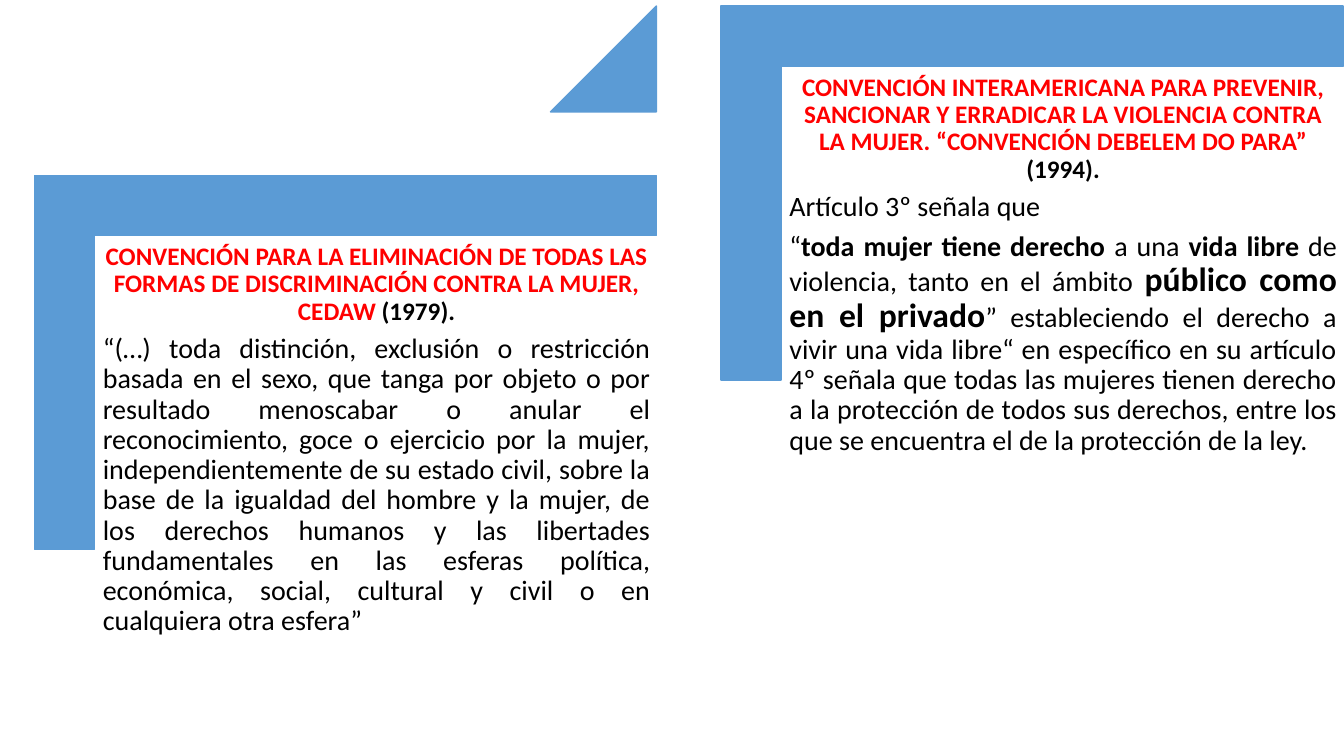
from pptx import Presentation
from pptx.dml.color import RGBColor as Rgb
from pptx.enum.shapes import MSO_SHAPE as Shape
from pptx.enum.text import MSO_ANCHOR as Anchor, PP_ALIGN as Align
from pptx.util import Inches, Pt

HUES = {"blue": "5B9BD5", "red": "FF0000", "black": "000000"}
WIDE, HIGH, BAND = 6.17, 3.71, 0.61

CEDAW = [
    [("CONVENCIÓN PARA LA ELIMINACIÓN DE TODAS LAS FORMAS DE DISCRIMINACIÓN "
      "CONTRA LA MUJER, CEDAW ", 18, True, "red"),
     ("(1979).", 18, True, "black")],
    [("“(…) toda distinción, exclusión o restricción basada en el sexo, que tanga "
      "por objeto o por resultado menoscabar o anular el reconocimiento, goce o "
      "ejercicio por la mujer, independientemente de su estado civil, sobre la base "
      "de la igualdad del hombre y la mujer, de los derechos humanos y las libertades "
      "fundamentales en las esferas política, económica, social, cultural y civil o "
      "en cualquiera otra esfera”", 20, False, "black")],
]
BELEM = [
    [("CONVENCIÓN INTERAMERICANA PARA PREVENIR, SANCIONAR Y ERRADICAR LA VIOLENCIA "
      "CONTRA LA MUJER. “CONVENCIÓN DEBELEM DO PARA” ", 18, True, "red"),
     ("(1994).", 18, True, "black")],
    [("Artículo 3º señala que", 20, False, "black")],
    [("“", 20, False, "black"),
     ("toda mujer tiene derecho ", 20, True, "black"),
     ("a una ", 20, False, "black"),
     ("vida libre", 20, True, "black"),
     (" de violencia, tanto en el ámbito ", 20, False, "black"),
     ("público como en el privado", 24, True, "black"),
     ("” estableciendo el derecho a vivir una vida libre“ en específico en su "
      "artículo 4º señala que todas las mujeres tienen derecho a la protección de "
      "todos sus derechos, entre los que se encuentra el de la protección de la ley.",
      20, False, "black")],
]


def add_mark(slide, kind, left, top, width, height):
    """Add a plain blue shape and return it."""
    mark = slide.shapes.add_shape(
        kind, Inches(left), Inches(top), Inches(width), Inches(height))
    mark.shadow.inherit = False
    mark.fill.solid()
    mark.fill.fore_color.rgb = Rgb.from_string(HUES["blue"])
    mark.line.color.rgb = Rgb.from_string(HUES["blue"])
    mark.line.width = Pt(1)
    return mark


def add_words(slide, left, top, width, height, paras):
    """Write a centred heading and justified text in the given box."""
    box = slide.shapes.add_textbox(
        Inches(left), Inches(top), Inches(width), Inches(height))
    frame = box.text_frame
    frame.word_wrap = True
    frame.vertical_anchor = Anchor.TOP
    frame.margin_left = frame.margin_right = Inches(0.07)
    frame.margin_top = frame.margin_bottom = Inches(0.07)
    for num, runs in enumerate(paras):
        para = frame.paragraphs[0] if num == 0 else frame.add_paragraph()
        para.alignment = Align.JUSTIFY if num else Align.CENTER
        para.line_spacing = 0.9
        para.space_after = Pt(7 if num else 6.3)
        for text, size, bold, hue in runs:
            run = para.add_run()
            run.text = text
            run.font.name = "Calibri"
            run.font.size = Pt(size)
            run.font.bold = bold
            run.font.color.rgb = Rgb.from_string(HUES[hue])


def add_step(slide, left, top, paras):
    """Place one step: a turned corner with its text inside the angle."""
    shift = (WIDE - HIGH) / 2
    angle = add_mark(slide, Shape.CORNER, left + shift, top - shift, HIGH, WIDE)
    angle.rotation = 90
    angle.adjustments[0] = angle.adjustments[1] = 0.161
    add_words(slide, left + BAND, top + BAND, 5.57, 4.88, paras)


def add_peak(slide, left, top, side):
    """Place the right-angled triangle between the steps."""
    peak = add_mark(slide, Shape.ISOSCELES_TRIANGLE, left, top, side, side)
    peak.adjustments[0] = 1


def main():
    """Build the slide and save it."""
    deck = Presentation()
    deck.slide_width, deck.slide_height = Inches(13.33), Inches(7.5)
    slide = deck.slides.add_slide(deck.slide_layouts[6])
    add_step(slide, 0.34, 1.74, CEDAW)
    add_peak(slide, 5.46, 0.06, 1.05)
    add_step(slide, 7.15, 0.06, BELEM)
    deck.save("out.pptx")


if __name__ == "__main__":
    main()
